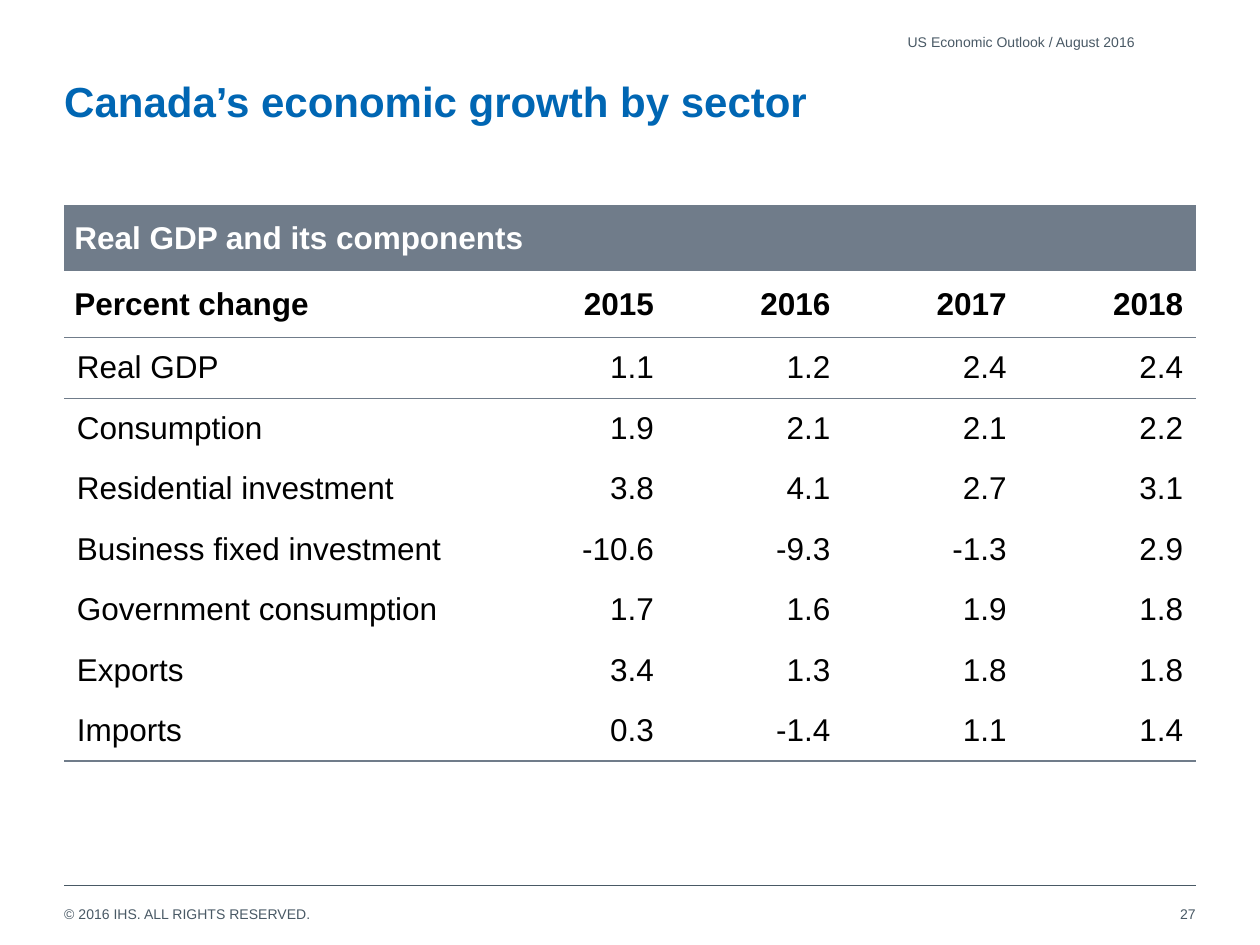
from lxml import etree
from pptx import Presentation
from pptx.dml.color import RGBColor
from pptx.enum.shapes import MSO_CONNECTOR
from pptx.enum.text import MSO_ANCHOR as Anchor, PP_ALIGN as Align
from pptx.oxml.ns import qn
from pptx.util import Inches, Pt

BLUE, GRAY, SLATE, BLACK, WHITE = "0066B3", "495965", "707C8A", "000000", "FFFFFF"
LEFT, WIDTH = 0.51, 8.98
SMALL = {"name": "Arial", "size": Pt(8), "bold": False}
TABLE_FONT = {"name": "Arial", "size": Pt(18)}

COLUMN_WIDTHS = [3.38] + [1.4] * 4
ROW_HEIGHTS = [0.53, 0.52] + [0.48] * 7
ROWS = [
    ["Real GDP and its components", "", "", "", ""],
    ["Percent change", "2015", "2016", "2017", "2018"],
    ["Real GDP", "1.1", "1.2", "2.4", "2.4"],
    ["Consumption", "1.9", "2.1", "2.1", "2.2"],
    ["Residential investment", "3.8", "4.1", "2.7", "3.1"],
    ["Business fixed investment", "-10.6", "-9.3", "-1.3", "2.9"],
    ["Government consumption", "1.7", "1.6", "1.9", "1.8"],
    ["Exports", "3.4", "1.3", "1.8", "1.8"],
    ["Imports", "0.3", "-1.4", "1.1", "1.4"],
]
# Rule below a row: colour and width in points
RULES = {0: (WHITE, 1.5), 1: (SLATE, 1), 2: (SLATE, 0.5), len(ROWS) - 1: (SLATE, 1)}


def color(hex_string):
    return RGBColor.from_string(hex_string)


def write(frame, text, font_format, font_color, align=Align.LEFT):
    paragraph = frame.paragraphs[0]
    paragraph.alignment = align
    run = paragraph.add_run()
    run.text = text
    for name, value in font_format.items():
        setattr(run.font, name, value)
    run.font.color.rgb = color(font_color)


def set_frame(frame, anchor):
    """Remove the insets and set wrapping and anchor."""
    values = {"margin_left": 0, "margin_right": 0, "margin_top": 0,
              "margin_bottom": 0, "word_wrap": True, "vertical_anchor": anchor}
    for name, value in values.items():
        setattr(frame, name, value)


def add_title(slide, left, top, width, height):
    title = slide.shapes.title
    title.left, title.top = Inches(left), Inches(top)
    title.width, title.height = Inches(width), Inches(height)
    set_frame(title.text_frame, Anchor.TOP)
    font_format = {"name": "Arial", "size": Pt(24), "bold": True}
    write(title.text_frame, "Canada’s economic growth by sector", font_format, BLUE)


def add_small_text(slide, text, left, top, width, height, align, anchor=Anchor.MIDDLE):
    box = slide.shapes.add_textbox(Inches(left), Inches(top), Inches(width), Inches(height))
    set_frame(box.text_frame, anchor)
    write(box.text_frame, text, SMALL, GRAY, align)


def add_footer(slide, left, top, width):
    line = slide.shapes.add_connector(MSO_CONNECTOR.STRAIGHT, Inches(left), Inches(top),
                                      Inches(left + width), Inches(top))
    line.line.color.rgb = color(GRAY)
    line.line.width = Pt(0.5)
    etree.SubElement(line._element.spPr, qn("a:effectLst"))
    add_small_text(slide, "© 2016 IHS. ALL RIGHTS RESERVED.", left, top + 0.16,
                   6.85, 0.13, Align.LEFT, Anchor.TOP)
    add_small_text(slide, "27", left + width - 2.26, top + 0.02, 2.26, 0.4, Align.RIGHT)


def add_border(cell, side, rule):
    properties = cell._tc.get_or_add_tcPr()
    line = etree.SubElement(properties, qn(f"a:{side}"))
    if rule is None:
        line.set("w", "0")
        etree.SubElement(line, qn("a:noFill"))
        return
    line_color, width = rule
    line.set("w", str(Pt(width)))
    fill = etree.SubElement(line, qn("a:solidFill"))
    etree.SubElement(fill, qn("a:srgbClr")).set("val", line_color)


def format_cell(cell, row, column, text):
    is_label = column == 0
    side_margin = 0.08 if row < 2 and is_label else 0.1
    cell.margin_left = cell.margin_right = Inches(side_margin)
    cell.margin_top = cell.margin_bottom = Inches(0.05)
    cell.vertical_anchor = Anchor.MIDDLE
    for side, rule in (("lnL", None), ("lnR", None),
                       ("lnT", RULES.get(row - 1)), ("lnB", RULES.get(row))):
        add_border(cell, side, rule)
    if row == 0:
        cell.fill.solid()
        cell.fill.fore_color.rgb = color(SLATE)
    else:
        cell.fill.background()
    if text:
        write(cell.text_frame, text, {**TABLE_FONT, "bold": row < 2},
              WHITE if row == 0 else BLACK, Align.LEFT if is_label else Align.RIGHT)


def add_growth_table(slide, left, top):
    frame = slide.shapes.add_table(len(ROWS), len(COLUMN_WIDTHS), Inches(left), Inches(top),
                                   Inches(sum(COLUMN_WIDTHS)), Inches(sum(ROW_HEIGHTS)))
    table = frame.table
    table.first_row = table.horz_banding = False
    for column, width in zip(table.columns, COLUMN_WIDTHS):
        column.width = Inches(width)
    for row, height in zip(table.rows, ROW_HEIGHTS):
        row.height = Inches(height)
    for row, texts in enumerate(ROWS):
        for column, text in enumerate(texts):
            format_cell(table.cell(row, column), row, column, text)
    table.cell(0, 0).merge(table.cell(0, len(COLUMN_WIDTHS) - 1))


def main():
    presentation = Presentation()
    presentation.slide_width, presentation.slide_height = Inches(10), Inches(7.5)
    slide = presentation.slides.add_slide(presentation.slide_layouts[5])
    add_footer(slide, LEFT, 7.03, WIDTH)
    add_title(slide, LEFT, 0.6, WIDTH, 0.87)
    add_small_text(slide, "US Economic Outlook / August 2016", LEFT, 0.21, 8.5, 0.24, Align.RIGHT)
    add_growth_table(slide, LEFT, 1.63)
    presentation.save("out.pptx")


if __name__ == "__main__":
    main()
